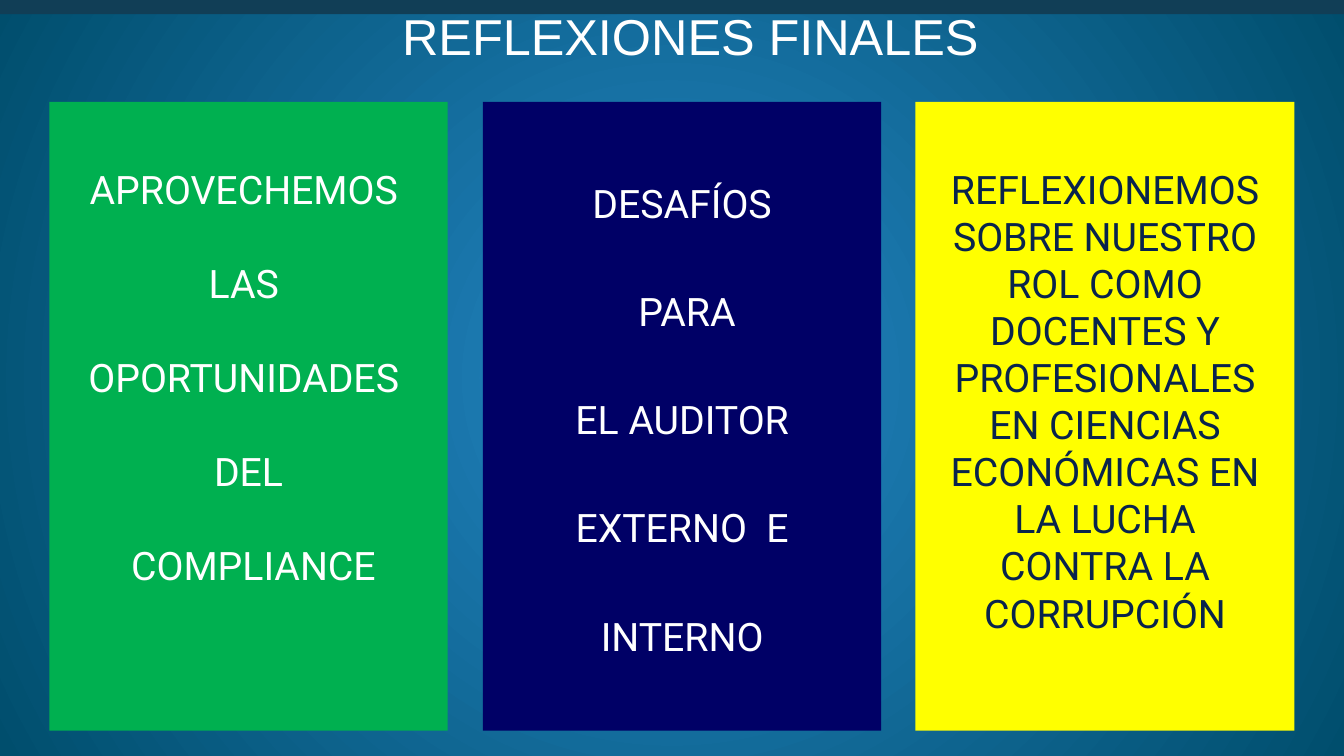
from dataclasses import dataclass
from lxml import etree
from pptx import Presentation
from pptx.dml.color import RGBColor
from pptx.enum.shapes import MSO_SHAPE as Shape
from pptx.enum.text import MSO_ANCHOR as Anchor, PP_ALIGN as Align
from pptx.oxml.ns import qn
from pptx.util import Inches, Pt


@dataclass(frozen=True)
class Theme:
    glow: str = "2486C4"
    edge: str = "004E6D"
    band: str = "113E56"
    green: str = "00B050"
    navy: str = "000066"
    yellow: str = "FFFF00"
    white: str = "FFFFFF"
    ink: str = "09244C"
    title: int = 36
    body: int = 28


theme = Theme()
rgb = RGBColor.from_string


def add_rect(slide, left, top, width, height, color):
    rect = slide.shapes.add_shape(
        Shape.RECTANGLE, Inches(left), Inches(top), Inches(width), Inches(height))
    rect.shadow.inherit = False
    rect.fill.solid()
    rect.fill.fore_color.rgb = rgb(color)
    rect.line.fill.background()
    return rect


def style(para, face, size, color):
    para.alignment = Align.CENTER
    para.font.name = face
    para.font.size = Pt(size)
    para.font.color.rgb = rgb(color)


deck = Presentation()
deck.slide_width = Inches(13.33)
deck.slide_height = Inches(7.5)
slide = deck.slides.add_slide(deck.slide_layouts[6])

# Background: round gradient from the centre
fill = slide.background.fill
fill.gradient()
for stop, color in zip(fill.gradient_stops, (theme.glow, theme.edge)):
    stop.color.rgb = rgb(color)
grad = slide.element.find(".//" + qn("a:gradFill"))
lin = grad.find(qn("a:lin"))
path = etree.Element(qn("a:path"), path="circle")
etree.SubElement(path, qn("a:fillToRect"), {side: "50000" for side in "ltrb"})
grad.replace(lin, path)

# Top band
add_rect(slide, 0, 0, 13.33, 0.14, theme.band)

# Title
box = slide.shapes.add_textbox(Inches(0.85), Inches(0.05), Inches(12), Inches(0.57))
frame = box.text_frame
frame.word_wrap = True
frame.margin_left = frame.margin_right = frame.margin_top = frame.margin_bottom = 0
frame.text = "REFLEXIONES FINALES"
style(frame.paragraphs[0], "Arial", theme.title, theme.white)

# Panels: left, width, fill, text colour, top inset, line spacing, gap, lines
panels = [
    (0.49, 3.95, theme.green, theme.white, 0.63, 1, 33.6,
     ["APROVECHEMOS ", "LAS ", "OPORTUNIDADES ", "DEL", " COMPLIANCE"]),
    (4.79, 3.95, theme.navy, theme.white, 0.7, 1.15, 38.6,
     ["DESAFÍOS", " PARA", "EL AUDITOR", " EXTERNO  E ", "INTERNO"]),
    (9.08, 3.76, theme.yellow, theme.ink, 0.63, 1, 0,
     ["REFLEXIONEMOS SOBRE NUESTRO ROL COMO DOCENTES Y PROFESIONALES "
      "EN CIENCIAS ECONÓMICAS EN LA LUCHA CONTRA LA CORRUPCIÓN"]),
]
for left, width, color, ink, inset, pitch, gap, lines in panels:
    panel = add_rect(slide, left, 1.01, width, 6.24, color)
    frame = panel.text_frame
    frame.word_wrap = True
    frame.vertical_anchor = Anchor.TOP
    frame.margin_left = frame.margin_right = Inches(0.2)
    frame.margin_top = Inches(inset)
    frame.margin_bottom = Inches(0.08)
    frame.text = "\n".join(lines)
    for i, para in enumerate(frame.paragraphs):
        style(para, "Roboto", theme.body, ink)
        para.line_spacing = float(pitch)
        if i:
            para.space_before = Pt(gap)

deck.save("out.pptx")
